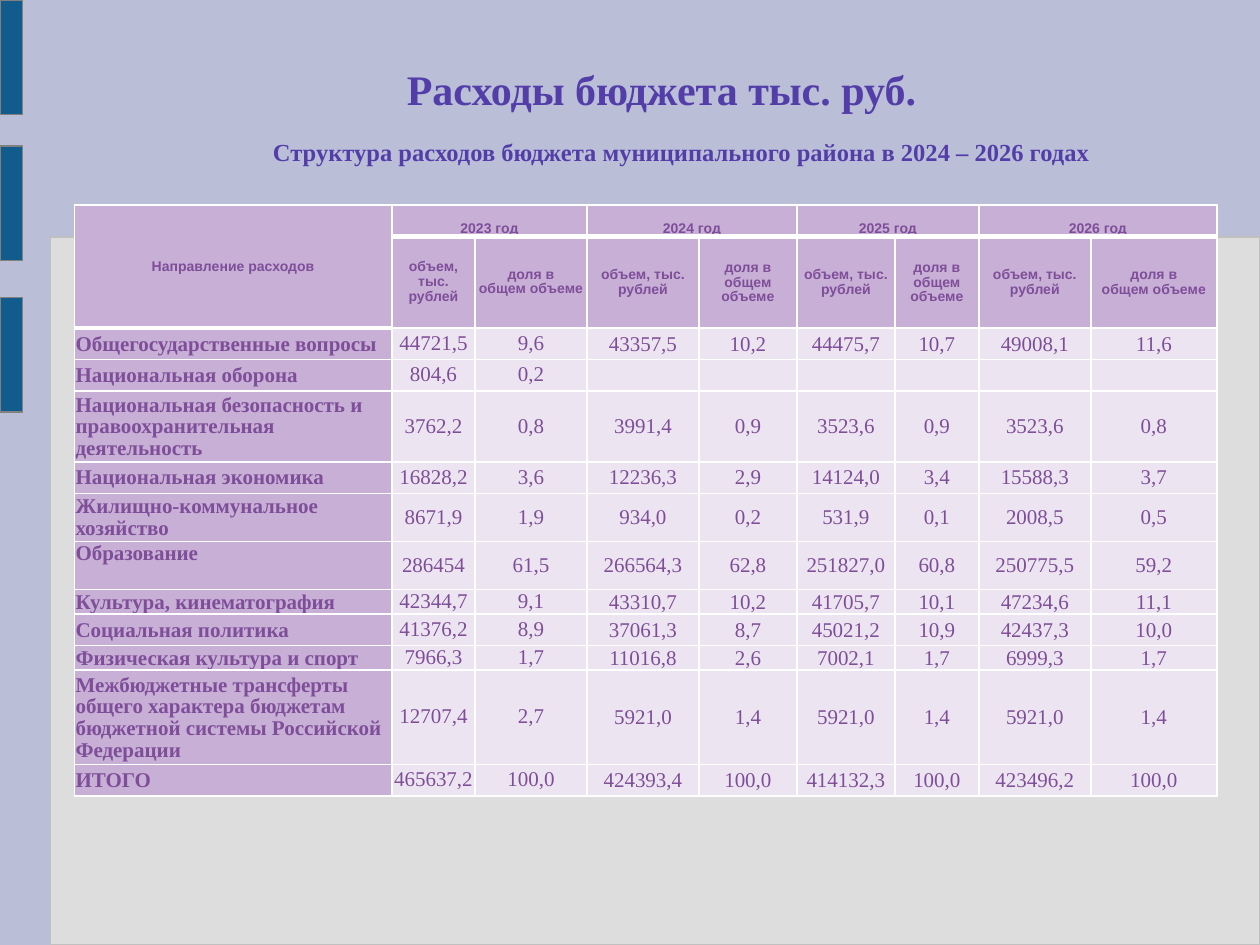
import dataclasses
import typing

import lxml.etree
import pptx
import pptx.dml.color
import pptx.enum.shapes
import pptx.enum.text
import pptx.oxml.ns
import pptx.util

Pt = pptx.util.Pt
Align = pptx.enum.text.PP_ALIGN
Anchor = pptx.enum.text.MSO_ANCHOR


@dataclasses.dataclass(frozen=True)
class Theme:
    back: str = "BABED6"
    panel: str = "DDDDDD"
    rim: str = "C0C0C0"
    bar: str = "125C8D"
    edge: str = "808080"
    title: str = "533EA9"
    text: str = "7E4E99"
    head: str = "C8AFD6"
    body: str = "EDE4F1"
    grid: str = "FFFFFF"
    serif: str = "Times New Roman"
    sans: str = "Arial"
    big: float = 24
    sub: float = 14
    cell: float = 12
    small: float = 8
    thin: float = 1
    thick: float = 3
    lead: float = 0.93


class Box(typing.NamedTuple):
    left: float
    top: float
    width: float
    height: float


class Style(typing.NamedTuple):
    face: str
    size: float
    color: str
    bold: bool
    align: Align


class Row(typing.NamedTuple):
    height: float
    name: str
    values: str


THEME = Theme()
HEAD = Style(THEME.sans, THEME.small, THEME.text, True, Align.CENTER)
NAME = Style(THEME.serif, THEME.cell, THEME.text, True, Align.LEFT)
VALUE = Style(THEME.serif, THEME.cell, THEME.text, False, Align.CENTER)
TITLE = Style(THEME.serif, THEME.big, THEME.title, True, Align.CENTER)
SUB = Style(THEME.serif, THEME.sub, THEME.title, True, Align.LEFT)

PANEL = Box(28.8, 135.36, 691.2, 404.64)
BARS = [Box(0, top, 13, 65.5) for top in (0, 83.5, 170)]
TABLE = Box(42.5, 117, 652, 337)
WIDTHS = (181.5, 47.5, 64, 64, 56, 56, 48, 64, 72)
HEADS = (18, 52.5)
YEARS = ("2023 год", "2024 год", "2025 год", "2026 год")
SUM = "объем, тыс. рублей"
SLIM = "объем,\vтыс.\vрублей"
SHARE = "доля в\vобщем объеме"
ROWS = (
    Row(18, "Общегосударственные вопросы", "44721,5 9,6 43357,5 10,2 44475,7 10,7 49008,1 11,6"),
    Row(18, "Национальная оборона", "804,6 0,2"),
    Row(40.5, "Национальная безопасность и правоохранительная деятельность",
        "3762,2 0,8 3991,4 0,9 3523,6 0,9 3523,6 0,8"),
    Row(18, "Национальная экономика", "16828,2 3,6 12236,3 2,9 14124,0 3,4 15588,3 3,7"),
    Row(27.5, "Жилищно-коммунальное хозяйство", "8671,9 1,9 934,0 0,2 531,9 0,1 2008,5 0,5"),
    Row(27.5, "Образование", "286454 61,5 266564,3 62,8 251827,0 60,8 250775,5 59,2"),
    Row(14, "Культура, кинематография", "42344,7 9,1 43310,7 10,2 41705,7 10,1 47234,6 11,1"),
    Row(18, "Социальная политика", "41376,2 8,9 37061,3 8,7 45021,2 10,9 42437,3 10,0"),
    Row(14, "Физическая культура и спорт", "7966,3 1,7 11016,8 2,6 7002,1 1,7 6999,3 1,7"),
    Row(54, "Межбюджетные трансферты общего характера бюджетам бюджетной системы Российской Федерации",
        "12707,4 2,7 5921,0 1,4 5921,0 1,4 5921,0 1,4"),
    Row(18, "ИТОГО", "465637,2 100,0 424393,4 100,0 414132,3 100,0 423496,2 100,0"),
)


def tint(code: str) -> pptx.dml.color.RGBColor:
    return pptx.dml.color.RGBColor.from_string(code)


def place(box: Box) -> list:
    return [Pt(side) for side in box]


def block(slide, box: Box, fill: str, line: str) -> None:
    kind = pptx.enum.shapes.MSO_SHAPE.ROUNDED_RECTANGLE
    shape = slide.shapes.add_shape(kind, *place(box))
    shape.adjustments[0] = 0
    shape.shadow.inherit = False
    shape.fill.solid()
    shape.fill.fore_color.rgb = tint(fill)
    shape.line.color.rgb = tint(line)
    shape.line.width = Pt(0.75)


def write(frame, text: str, style: Style, lead: float = THEME.lead):
    frame.text = text
    para = frame.paragraphs[0]
    para.alignment = style.align
    para.line_spacing = lead
    font = para.font
    font.name = style.face
    font.size = Pt(style.size)
    font.bold = style.bold
    font.color.rgb = tint(style.color)
    if not text:
        end = lxml.etree.SubElement(para._p, pptx.oxml.ns.qn("a:endParaRPr"))
        end.set("sz", str(int(style.size * 100)))
    return para


def label(slide, box: Box, text: str, style: Style, anchor: Anchor, lead: float):
    frame = slide.shapes.add_textbox(*place(box)).text_frame
    frame.word_wrap = True
    frame.vertical_anchor = anchor
    return write(frame, text, style, lead)


def border(cell, top: float, low: float) -> None:
    props = cell._tc.get_or_add_tcPr()
    sides = {"lnL": THEME.thin, "lnR": THEME.thin, "lnT": top, "lnB": low}
    for spot, (tag, width) in enumerate(sides.items()):
        line = lxml.etree.Element(pptx.oxml.ns.qn(f"a:{tag}"), w=str(int(Pt(width))))
        fill = lxml.etree.SubElement(line, pptx.oxml.ns.qn("a:solidFill"))
        lxml.etree.SubElement(fill, pptx.oxml.ns.qn("a:srgbClr"), val=THEME.grid)
        props.insert(spot, line)


def dress(cell, row: int, col: int) -> None:
    cell.fill.solid()
    cell.fill.fore_color.rgb = tint(THEME.head if row < 2 or col == 0 else THEME.body)
    side = 0 if col in (1, 2) else 0.7
    cell.margin_left = cell.margin_right = cell.margin_top = Pt(side)
    cell.margin_bottom = Pt(0)
    cell.vertical_anchor = Anchor.MIDDLE
    top = THEME.thick if row == 1 or (row, col) == (2, 0) else THEME.thin
    low = THEME.thick if row == 0 or (row, col) == (1, 0) else THEME.thin
    border(cell, top, low)


def budget(slide) -> None:
    heights = HEADS + tuple(row.height for row in ROWS)
    table = slide.shapes.add_table(len(heights), len(WIDTHS), *place(TABLE)).table
    table.first_row = table.horz_banding = False
    for col, width in zip(table.columns, WIDTHS):
        col.width = Pt(width)
    for row, height in zip(table.rows, heights):
        row.height = Pt(height)
    for row in range(len(heights)):
        for col in range(len(WIDTHS)):
            dress(table.cell(row, col), row, col)

    table.cell(0, 0).merge(table.cell(1, 0))
    write(table.cell(0, 0).text_frame, "Направление расходов", HEAD)
    for spot, year in enumerate(YEARS):
        col = 1 + 2 * spot
        cell = table.cell(0, col)
        cell.merge(table.cell(0, col + 1))
        cell.vertical_anchor = Anchor.BOTTOM
        write(cell.text_frame, year, HEAD)
        write(table.cell(1, col).text_frame, SUM if spot else SLIM, HEAD)
        write(table.cell(1, col + 1).text_frame, SHARE, HEAD)

    for row, entry in enumerate(ROWS, len(HEADS)):
        name = table.cell(row, 0)
        write(name.text_frame, entry.name, NAME)
        if entry.name == "Образование":
            name.vertical_anchor = Anchor.TOP
        values = entry.values.split()
        values += [""] * (len(WIDTHS) - 1 - len(values))
        for col, value in enumerate(values, 1):
            write(table.cell(row, col).text_frame, value, VALUE)


def main() -> None:
    deck = pptx.Presentation()
    deck.slide_width, deck.slide_height = Pt(720), Pt(540)
    slide = deck.slides.add_slide(deck.slide_layouts[6])
    slide.background.fill.solid()
    slide.background.fill.fore_color.rgb = tint(THEME.back)
    block(slide, PANEL, THEME.panel, THEME.rim)
    for bar in BARS:
        block(slide, bar, THEME.bar, THEME.edge)
    budget(slide)
    label(slide, Box(70.5, 21, 615, 62.5), "Расходы бюджета тыс. руб.", TITLE, Anchor.MIDDLE, THEME.lead)
    para = label(slide, Box(121.5, 74.5, 551.5, 46),
                 "Структура расходов бюджета муниципального района в 2024 – 2026 годах", SUB, Anchor.TOP, 1.0)
    para._p.get_or_add_pPr().set("indent", str(int(Pt(27.4))))
    deck.save("out.pptx")


if __name__ == "__main__":
    main()
